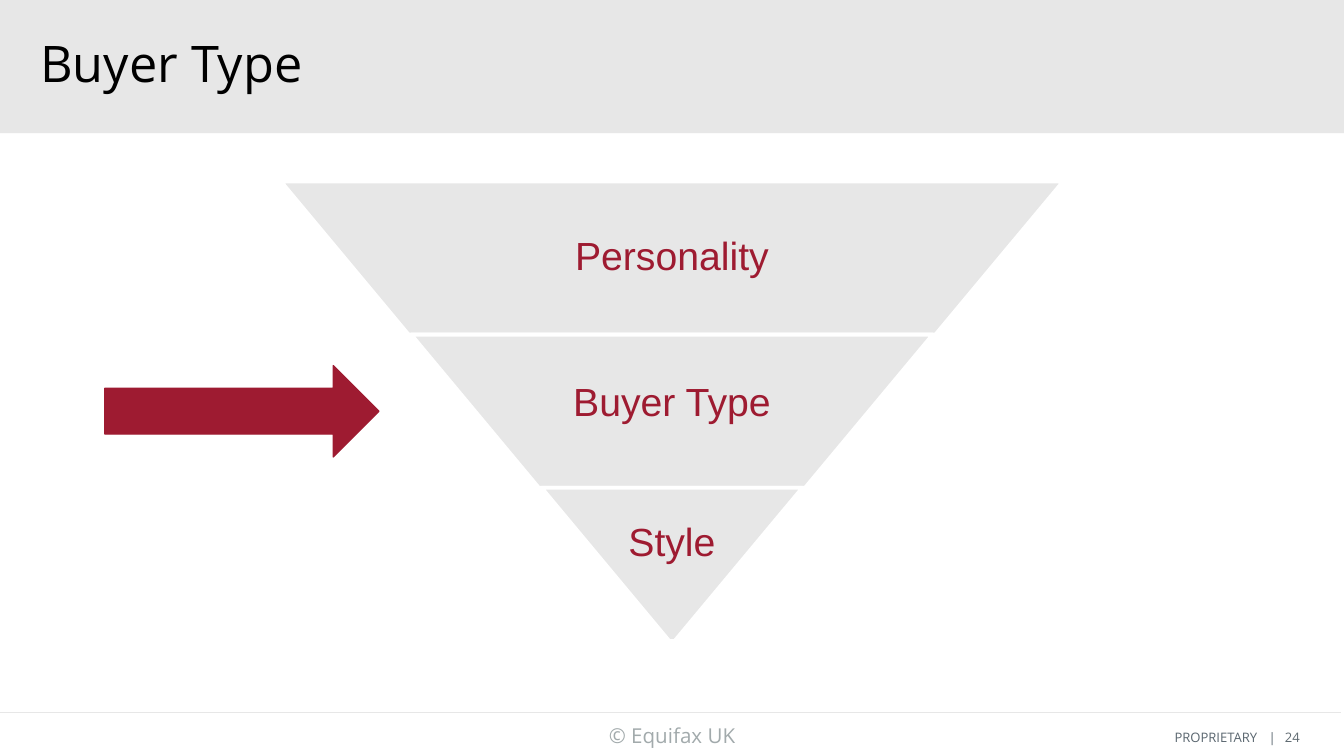
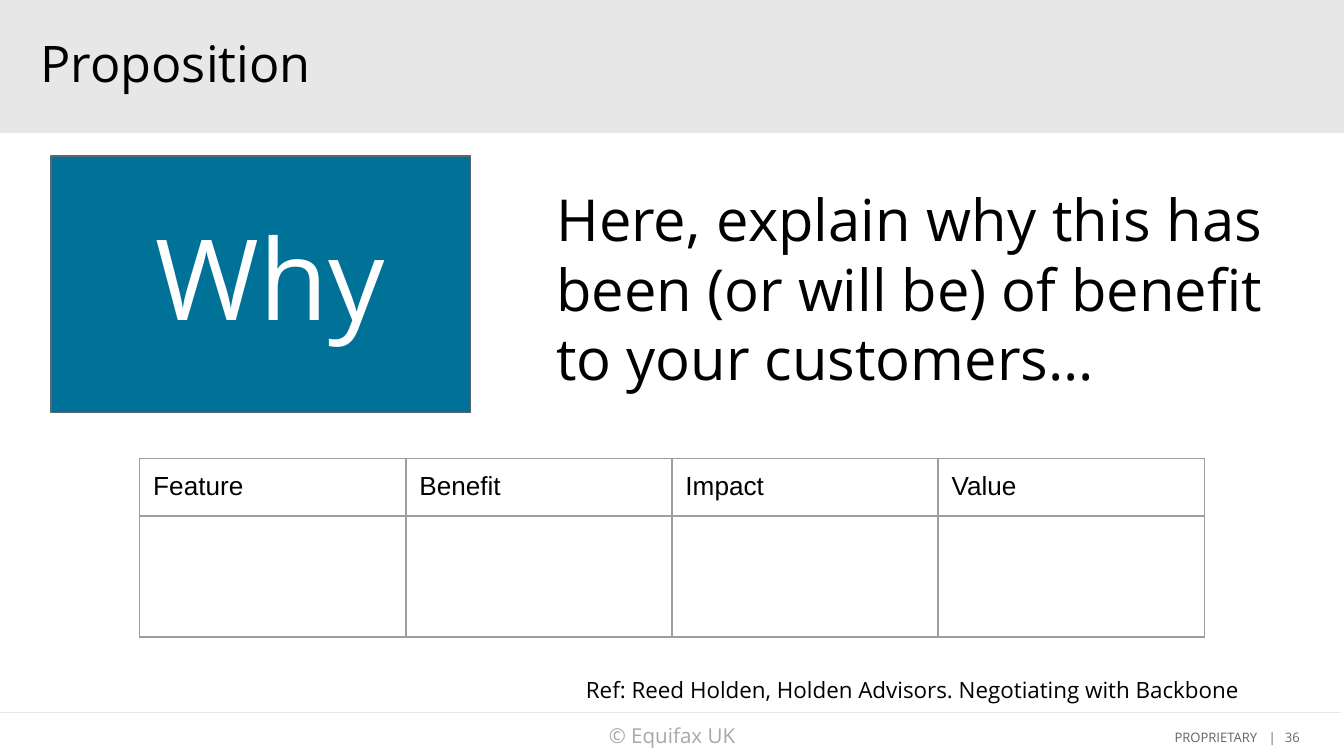
from lxml import etree
from pptx import Presentation
from pptx.dml.color import RGBColor
from pptx.enum.shapes import MSO_CONNECTOR, MSO_SHAPE
from pptx.enum.text import MSO_ANCHOR, PP_ALIGN
from pptx.oxml import parse_xml
from pptx.oxml.ns import nsdecls, qn
from pptx.util import Inches, Pt

COLORS = {
    "band": "E7E7E7", "white": "FFFFFF", "black": "000000", "red": "9E1B31",
    "teal": "007197", "slate": "5B6770", "number": "5F6A71",
    "copyright": "A2AAAC", "grid": "9E9E9E",
}
RGB = {name: RGBColor.from_string(value) for name, value in COLORS.items()}
SANS, ARIAL = "Open Sans", "Arial"


def write(frame, runs, size, font=SANS, align=PP_ALIGN.LEFT,
          anchor=MSO_ANCHOR.TOP, insets=(0, 0, 0, 0)):
    """Fill a text frame with one paragraph of (text, colour) runs."""
    frame.word_wrap = True
    frame.vertical_anchor = anchor
    for side, inset in zip(("left", "top", "right", "bottom"), insets):
        setattr(frame, f"margin_{side}", Inches(inset))
    paragraph = frame.paragraphs[0]
    paragraph.alignment = align
    for text, color in runs:
        run = paragraph.add_run()
        run.text = text
        for key, value in {"name": font, "size": Pt(size)}.items():
            setattr(run.font, key, value)
        run.font.color.rgb = RGB[color]
    return paragraph


def paint(shape, fill, line=None, width=0.72):
    shape.shadow.inherit = False
    shape.fill.solid()
    shape.fill.fore_color.rgb = RGB[fill]
    if line:
        shape.line.color.rgb = RGB[line]
        shape.line.width = Pt(width)
    else:
        shape.line.fill.background()


presentation = Presentation()
presentation.slide_width = Inches(10)
presentation.slide_height = Inches(10) * 9 // 16

# Shared band, title and footer
slides = []
for title, number in (("Buyer Type", "24"), ("Proposition", "36")):
    slide = presentation.slides.add_slide(presentation.slide_layouts[6])
    slides.append(slide)
    band = slide.shapes.add_shape(MSO_SHAPE.RECTANGLE, 0, 0, Inches(10), Inches(0.99))
    paint(band, "band")

    rule = slide.shapes.add_connector(
        MSO_CONNECTOR.STRAIGHT, 0, Inches(5.3), Inches(9.98), Inches(5.3))
    rule.line.color.rgb = RGB["band"]
    rule.line.width = Pt(0.72)
    etree.SubElement(rule._element.spPr, qn("a:effectLst"))

    title_box = slide.shapes.add_textbox(Inches(0.3), Inches(0.24), Inches(8.5), Inches(0.5))
    write(title_box.text_frame, [(title, "black")], 27)

    copyright_box = slide.shapes.add_textbox(
        Inches(4.53), Inches(5.38), Inches(1.1), Inches(0.21))
    write(copyright_box.text_frame, [("© Equifax UK", "copyright")], 11)

    footer_box = slide.shapes.add_textbox(
        Inches(8.74), Inches(5.43), Inches(1.1), Inches(0.14))
    footer = write(footer_box.text_frame,
                   [("PROPRIETARY\t|\t", "slate"), (number, "number")], 7)
    tab_list = etree.SubElement(footer._p.get_or_add_pPr(), qn("a:tabLst"))
    for position in (0.7, 0.82):
        etree.SubElement(tab_list, qn("a:tab"), pos=str(Inches(position)), algn="l")

buyer_slide, proposition_slide = slides

# Inverted pyramid, with its labels raised towards the wider edge
CENTER, TOP, TIER_HEIGHT, STEP, SLANT = 5, 1.35, 1.14, 0.97, 0.95
for index, (label, lift) in enumerate(
        (("Personality", 0.05), ("Buyer Type", 0.15), ("Style", 0.35))):
    top = TOP + index * TIER_HEIGHT
    bottom = top + TIER_HEIGHT
    half = STEP * (3 - index)
    corners = [(CENTER - half, top), (CENTER + half, top),
               (CENTER + half - SLANT, bottom), (CENTER - half + SLANT, bottom)]
    points = [(Inches(x), Inches(y)) for x, y in corners]
    builder = buyer_slide.shapes.build_freeform(*points[0])
    builder.add_line_segments(points[1:], close=True)
    tier = builder.convert_to_shape()
    paint(tier, "band", "white", 2.04)
    write(tier.text_frame, [(label, "red")], 21, ARIAL, PP_ALIGN.CENTER,
          MSO_ANCHOR.MIDDLE, (0, 0, 0, lift))

arrow = buyer_slide.shapes.add_shape(
    MSO_SHAPE.RIGHT_ARROW, Inches(0.78), Inches(2.72), Inches(2.04), Inches(0.68))
paint(arrow, "red", "red")

# Proposition: question, explanation, value table, reference
why = proposition_slide.shapes.add_shape(
    MSO_SHAPE.RECTANGLE, Inches(0.38), Inches(1.16), Inches(3.12), Inches(1.91))
paint(why, "teal", "slate")
write(why.text_frame, [("Why", "white")], 60, insets=(0.78, 0.39, 0, 0))

explanation = proposition_slide.shapes.add_textbox(
    Inches(4.14), Inches(1.37), Inches(5.25), Inches(1.57))
write(explanation.text_frame,
      [("Here, explain why this has been (or will be) of benefit to your customers…",
        "black")], 31, align=PP_ALIGN.JUSTIFY)

headings = ("Feature", "Benefit", "Impact", "Value")
table = proposition_slide.shapes.add_table(
    2, len(headings), Inches(1.04), Inches(3.41), Inches(7.92), Inches(1.33)).table
table.first_row = table.horz_banding = False
for column in table.columns:
    column.width = Inches(1.98)
for row, height in zip(table.rows, (0.43, 0.9)):
    row.height = Inches(height)
for cell, heading in zip(table.rows[0].cells, headings):
    write(cell.text_frame, [(heading, "black")], 14, ARIAL)
    cell.margin_left = cell.margin_top = Inches(0.1)
for cell in table.iter_cells():
    cell.fill.background()
    properties = cell._tc.get_or_add_tcPr()
    for index, side in enumerate("LRTB"):
        properties.insert(index, parse_xml(
            f'<a:ln{side} {nsdecls("a")} w="{Pt(0.75)}"><a:solidFill>'
            f'<a:srgbClr val="{COLORS["grid"]}"/></a:solidFill></a:ln{side}>'))

reference = proposition_slide.shapes.add_textbox(
    Inches(4.36), Inches(5.03), Inches(5), Inches(0.23))
write(reference.text_frame,
      [("Ref: Reed Holden, Holden Advisors. Negotiating with Backbone", "black")], 12)

presentation.save("out.pptx")
